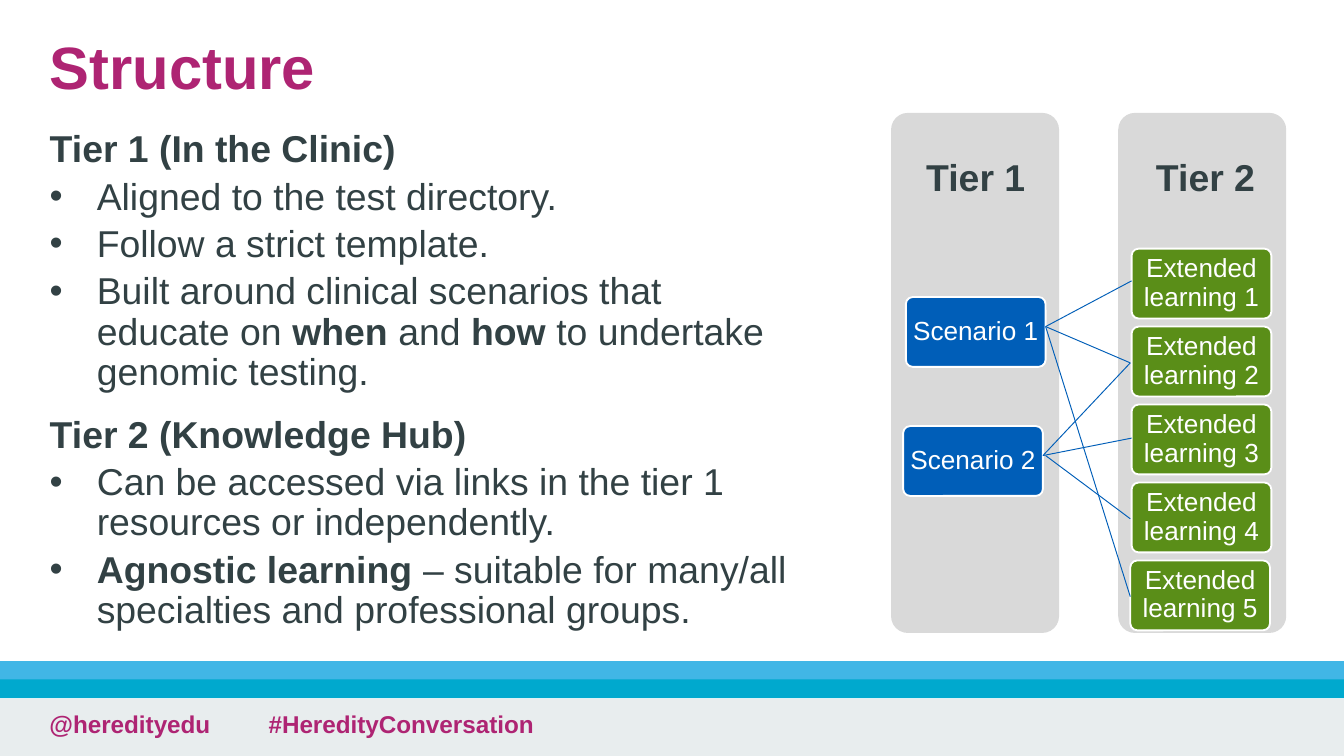
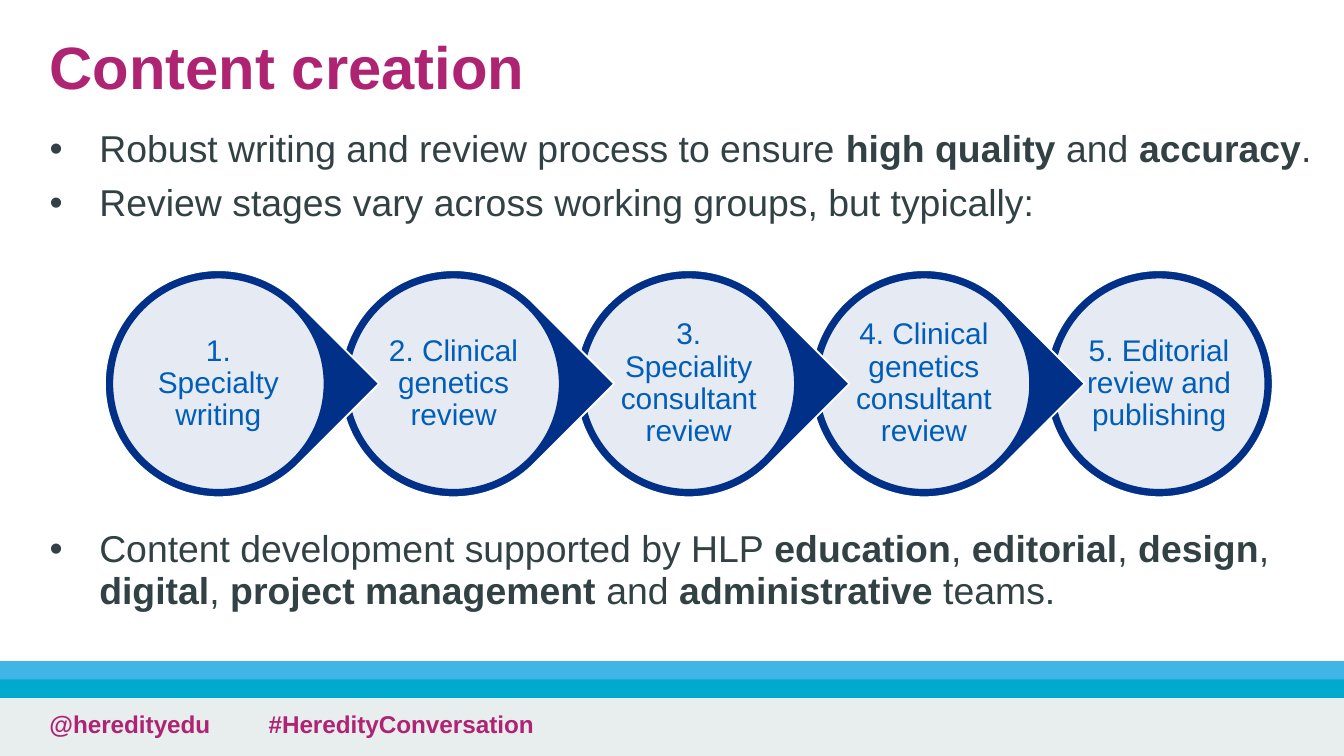
from dataclasses import dataclass

from lxml import etree
from pptx import Presentation
from pptx import presentation as decks
from pptx import slide as slides
from pptx import util as u
from pptx.dml.color import RGBColor
from pptx.enum import shapes, text
from pptx.oxml import ns
from pptx.shapes import autoshape, base, shapetree
from pptx.text import text as texts

PX = 4572
FONT = "Arial"
WHITE = RGBColor(0xFF, 0xFF, 0xFF)
MAGENTA = RGBColor(0xAE, 0x24, 0x73)
SLATE = RGBColor(0x32, 0x41, 0x44)
BLUE = RGBColor(0x00, 0x5E, 0xB8)
NAVY = RGBColor(0x00, 0x30, 0x87)
GREEN = RGBColor(0x5A, 0x8E, 0x18)
SKY = RGBColor(0x41, 0xB6, 0xE6)
AQUA = RGBColor(0x00, 0xA9, 0xCE)
PALE = RGBColor(0xE8, 0xED, 0xEE)
GREY = RGBColor(0xD9, 0xD9, 0xD9)

Canvas = shapetree.SlideShapes | shapetree.GroupShapes
Kind = shapes.MSO_SHAPE
CENTER = text.PP_ALIGN.CENTER
LEFT = text.PP_ALIGN.LEFT


@dataclass(frozen=True)
class Area:
    left: int
    top: int
    width: int
    height: int

    def emu(self) -> tuple[int, int, int, int]:
        return self.left * PX, self.top * PX, self.width * PX, self.height * PX

    def inset(self, gap: int) -> "Area":
        return Area(self.left + gap, self.top + gap, self.width - 2 * gap, self.height - 2 * gap)


@dataclass(frozen=True)
class Style:
    size: int = 20
    color: RGBColor = SLATE
    bold: bool | None = None
    align: text.PP_ALIGN = LEFT
    spacing: float = 0.9
    before: float = 0
    indent: int = 0
    level: int = 0


@dataclass(frozen=True)
class Item:
    words: str
    style: Style


@dataclass(frozen=True)
class Band:
    area: Area
    color: RGBColor


@dataclass(frozen=True)
class Handle:
    label: str
    area: Area


@dataclass(frozen=True)
class Card:
    label: str
    area: Area
    color: RGBColor


@dataclass(frozen=True)
class Link:
    start: tuple[int, int]
    end: tuple[int, int]


TITLE = Style(32, MAGENTA, True)
HANDLE = Style(13, MAGENTA, True, spacing=1)
TIER = Style(bold=True, align=CENTER, spacing=1)
CARD = Style(14, WHITE, align=CENTER)
STAGE = Style(16, BLUE, align=CENTER)
HEADING = Style(before=7.5)
SECOND_HEADING = Style(before=12)
POINT = Style(before=3.8, indent=70, level=1)
BULLET = Style(before=7.5, indent=74)
TEAMS = Style(spacing=0.95, before=6, indent=74)

BANDS = [
    Band(Area(0, 1040, 2000, 85), PALE),
    Band(Area(0, 984, 2000, 28), SKY),
    Band(Area(0, 1011, 2000, 28), AQUA),
]
HANDLES = [
    Handle("@heredityedu", Area(54, 1046, 326, 80)),
    Handle("#HeredityConversation", Area(380, 1046, 842, 80)),
]
TITLE_AREA = Area(54, 50, 1890, 110)

STRUCTURE = [
    Item("*Tier 1 (In the Clinic)*", HEADING),
    Item("Aligned to the test directory.", POINT),
    Item("Follow a strict template.", POINT),
    Item(
        "Built around clinical scenarios that educate on *when* and *how* "
        "to undertake genomic testing.",
        POINT,
    ),
    Item("*Tier 2 (Knowledge Hub)*", SECOND_HEADING),
    Item("Can be accessed via links in the tier 1 resources or independently.", POINT),
    Item(
        "*Agnostic learning *– suitable for many/all specialties and professional groups.",
        POINT,
    ),
]
CREATION = [
    Item("Robust writing and review process to ensure *high quality *and *accuracy*.", BULLET),
    Item("Review stages vary across working groups, but typically:", BULLET),
]
SUPPORT = Item(
    "Content development supported by HLP *education*, *editorial*, *design*, *digital*, "
    "*project management* and *administrative* teams.",
    TEAMS,
)

TIERS = [Card("Tier 1", Area(1326, 168, 250, 774), GREY), Card("Tier 2", Area(1664, 168, 250, 774), GREY)]
TIER_LABELS = [Area(1348, 220, 208, 88), Area(1690, 220, 208, 88)]
CARDS = [
    Card("Scenario 1", Area(1348, 442, 208, 104), BLUE),
    Card("Scenario 2", Area(1344, 634, 208, 104), BLUE),
] + [
    Card(f"Extended learning {number}", Area(left, 254 + 116 * number, 208, 104), GREEN)
    for number, left in enumerate([1684, 1684, 1684, 1684, 1682], 1)
]
LINKS = [
    Link((1684, 418), (1556, 486)),
    Link((1556, 486), (1682, 888)),
    Link((1556, 486), (1682, 540)),
    Link((1552, 678), (1682, 540)),
    Link((1556, 678), (1682, 772)),
    Link((1552, 678), (1684, 652)),
]
STAGES = [
    "1. Specialty writing",
    "2. Clinical genetics review",
    "3. Speciality consultant review",
    "4. Clinical genetics consultant review",
    "5. Editorial review and publishing",
]


def add_element(parent: etree.ElementBase, tag: str, **values: str) -> etree.ElementBase:
    return etree.SubElement(parent, ns.qn(tag), **values)


def write_para(para: texts._Paragraph, item: Item) -> None:
    style = item.style
    para.level = style.level
    para.alignment = style.align
    props = para._p.get_or_add_pPr()
    props.set("marL", str(style.indent * PX))
    props.set("indent", str(-style.indent * PX))
    if style.indent:
        add_element(props, "a:buFont", typeface=FONT)
        add_element(props, "a:buChar", char="•")
    else:
        add_element(props, "a:buNone")
    para.line_spacing = style.spacing
    para.space_before = u.Pt(style.before)
    para.font.name = FONT
    para.font.size = u.Pt(style.size)
    para.font.color.rgb = style.color
    para.font.bold = style.bold
    pieces = item.words.split("*")
    for index, piece in enumerate(pieces):
        if piece:
            span = para.add_run()
            span.text = piece
            if len(pieces) > 1:
                span.font.bold = index % 2 == 1


def write_frame(
    frame: texts.TextFrame, items: list[Item], middle: bool = False, margin: int | None = None
) -> None:
    frame.word_wrap = True
    frame.auto_size = text.MSO_AUTO_SIZE.NONE
    frame.vertical_anchor = text.MSO_ANCHOR.MIDDLE if middle else text.MSO_ANCHOR.TOP
    if margin is not None:
        frame.margin_left = frame.margin_right = margin * PX
        frame.margin_top = frame.margin_bottom = margin * PX
    for index, item in enumerate(items):
        write_para(frame.add_paragraph() if index else frame.paragraphs[0], item)


def add_text(
    canvas: Canvas, area: Area, item: Item, middle: bool = False, margin: int | None = None
) -> base.BaseShape:
    box = canvas.add_textbox(*area.emu())
    write_frame(box.text_frame, [item], middle, margin)
    return box


def add_box(
    canvas: Canvas, kind: Kind, area: Area, fill: RGBColor, line: RGBColor | None = None
) -> autoshape.Shape:
    box = canvas.add_shape(kind, *area.emu())
    box.shadow.inherit = False
    box.fill.solid()
    box.fill.fore_color.rgb = fill
    if line is None:
        box.line.fill.background()
    else:
        box.line.color.rgb = line
        box.line.width = u.Pt(1)
    if kind == Kind.ROUNDED_RECTANGLE:
        box.adjustments[0] = 0.1
    return box


def add_link(page: slides.Slide, link: Link) -> None:
    ends = [value * PX for value in link.start + link.end]
    line = page.shapes.add_connector(shapes.MSO_CONNECTOR.STRAIGHT, *ends)
    line.line.color.rgb = BLUE
    line.line.width = u.Pt(0.5)
    add_element(line.element.spPr, "a:effectLst")


def add_stage(canvas: Canvas, index: int) -> None:
    area = Area(156 + 350 * index, 402, 338, 338)
    last = index == len(STAGES) - 1
    drop = add_box(canvas, Kind.OVAL if last else Kind.TEAR, area, NAVY, WHITE)
    if not last:
        drop.adjustments[0] = 1
        drop.rotation = 45
    disc = add_box(canvas, Kind.OVAL, area.inset(11), WHITE, NAVY)
    color = disc.element.spPr.find(f"{ns.qn('a:solidFill')}/{ns.qn('a:srgbClr')}")
    add_element(color, "a:alpha", val="90000")
    add_text(canvas, area.inset(56), Item(STAGES[index], STAGE), middle=True, margin=4)


def add_page(
    deck: decks.Presentation, title: str, area: Area, items: list[Item]
) -> slides.Slide:
    page = deck.slides.add_slide(deck.slide_layouts[1])
    heading, body = page.placeholders
    heading.left, heading.top, heading.width, heading.height = TITLE_AREA.emu()
    body.left, body.top, body.width, body.height = area.emu()
    write_frame(heading.text_frame, [Item(title, TITLE)], middle=True)
    write_frame(body.text_frame, items)
    return page


def dress_layout(page: slides.Slide) -> None:
    layout = page.slide_layout
    tree = layout.shapes.element
    for holder in list(layout.placeholders):
        if holder.placeholder_format.idx >= 10:
            tree.remove(holder.element)
    parts = [add_box(page.shapes, Kind.RECTANGLE, band.area, band.color) for band in BANDS]
    parts += [add_text(page.shapes, handle.area, Item(handle.label, HANDLE)) for handle in HANDLES]
    for part in parts:
        tree.append(part.element)


def build_structure(deck: decks.Presentation) -> slides.Slide:
    page = add_page(deck, "Structure", Area(54, 184, 1154, 792), STRUCTURE)
    dress_layout(page)
    for tier in TIERS:
        add_box(page.shapes, Kind.ROUNDED_RECTANGLE, tier.area, tier.color)
    for card in CARDS:
        box = add_box(page.shapes, Kind.ROUNDED_RECTANGLE, card.area, card.color, WHITE)
        write_frame(box.text_frame, [Item(card.label, CARD)], middle=True, margin=4)
    for link in LINKS:
        add_link(page, link)
    for tier, area in zip(TIERS, TIER_LABELS):
        add_text(page.shapes, area, Item(tier.label, TIER))
    return page


def build_creation(deck: decks.Presentation) -> slides.Slide:
    page = add_page(deck, "Content creation", Area(54, 184, 1926, 174), CREATION)
    group = page.shapes.add_group_shape()
    for index in reversed(range(len(STAGES))):
        add_stage(group.shapes, index)
    add_text(page.shapes, Area(54, 776, 1890, 174), SUPPORT)
    return page


def main() -> None:
    deck = Presentation()
    deck.slide_width, deck.slide_height = 2000 * PX, 1125 * PX
    build_structure(deck)
    build_creation(deck)
    deck.save("out.pptx")


if __name__ == "__main__":
    main()
